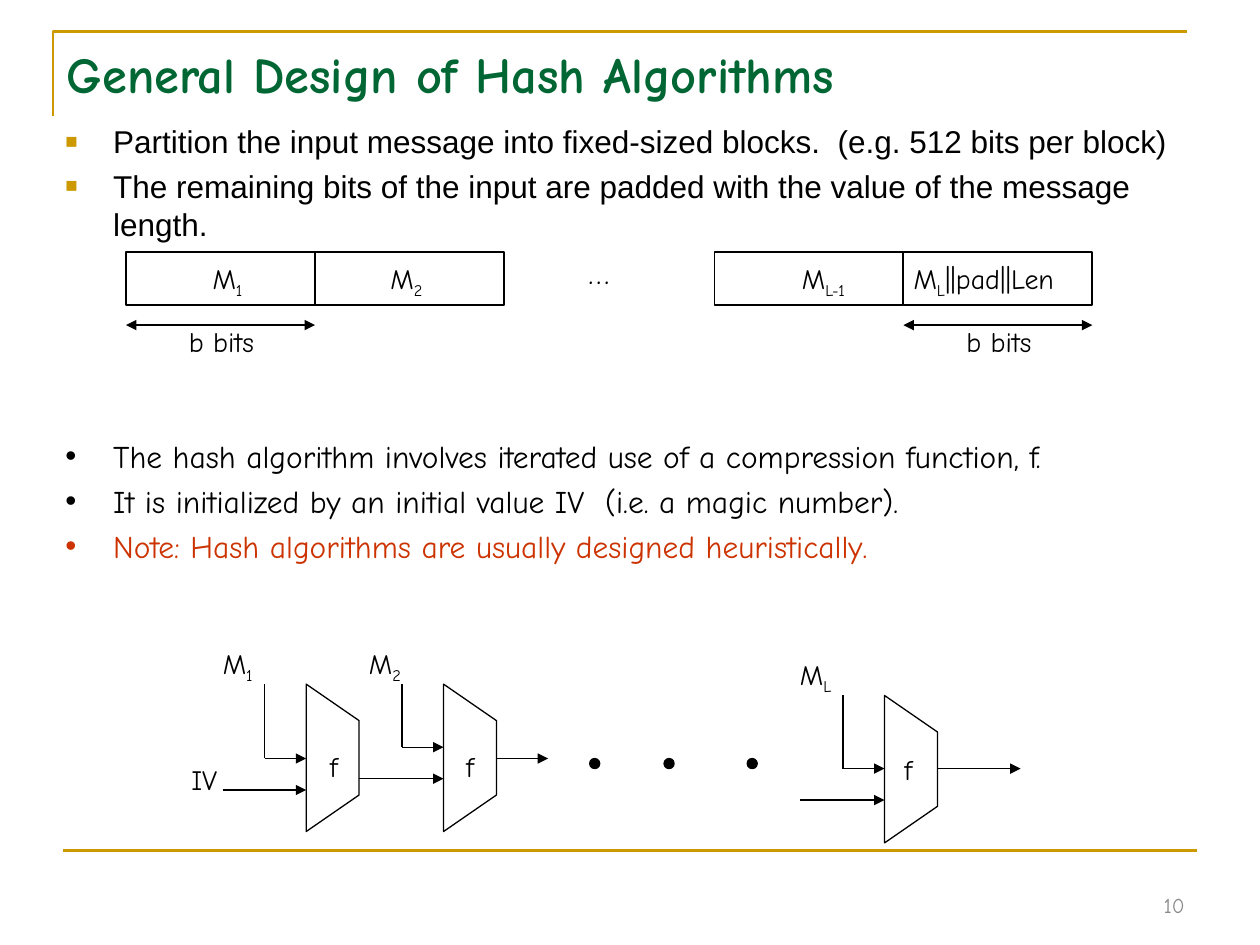
from dataclasses import dataclass

from lxml import etree
from pptx import Presentation
from pptx.dml.color import RGBColor
from pptx.enum.shapes import MSO_CONNECTOR, MSO_SHAPE
from pptx.enum.text import MSO_ANCHOR, MSO_AUTO_SIZE, PP_ALIGN
from pptx.oxml.ns import qn
from pptx.util import Inches, Pt

STRAIGHT = MSO_CONNECTOR.STRAIGHT
RECTANGLE, OVAL = MSO_SHAPE.RECTANGLE, MSO_SHAPE.OVAL
LEFT, CENTER, RIGHT = PP_ALIGN.LEFT, PP_ALIGN.CENTER, PP_ALIGN.RIGHT
TOP, MIDDLE, BOTTOM = MSO_ANCHOR.TOP, MSO_ANCHOR.MIDDLE, MSO_ANCHOR.BOTTOM
FIT_SHAPE = MSO_AUTO_SIZE.SHAPE_TO_FIT_TEXT


def color(value):
    """Turn a hex string into a colour."""
    return RGBColor.from_string(value)


def inches(values):
    """Turn plain numbers into lengths."""
    return [Inches(value) for value in values]


def add_child(parent, tag, **attributes):
    """Append a DrawingML element with the given attributes."""
    return etree.SubElement(parent, qn(tag), attributes)


@dataclass
class SlideBuilder:
    """Hold the style and the slide, and add each kind of element."""

    slide: object
    hand_font: str = "Comic Neue"
    plain_font: str = "Arial"
    ink: str = "000000"
    gold: str = "CC9900"
    green: str = "006633"
    red: str = "CC3300"
    gray: str = "898989"

    def format_font(self, paragraph, size, value=None, name=None, bold=False):
        """Set the font of a whole paragraph."""
        font = paragraph.font
        font.name = name or self.hand_font
        font.size = Pt(size)
        font.bold = bold
        font.color.rgb = color(value or self.ink)

    def title(self, text, box):
        """Fill and place the title placeholder."""
        shape = self.slide.shapes.title
        shape.left, shape.top, shape.width, shape.height = inches(box)
        frame = shape.text_frame
        frame.text = text
        frame.vertical_anchor = MIDDLE
        frame.paragraphs[0].alignment = LEFT
        self.format_font(frame.paragraphs[0], 28.8, self.green, bold=True)

    def bullets(self, items, box, character, name, bullet_color=None, percent=100):
        """Add a bulleted list from pairs of text and colour."""
        frame = self.slide.shapes.add_textbox(*inches(box)).text_frame
        frame.word_wrap = True
        for index, (text, value) in enumerate(items):
            paragraph = frame.add_paragraph() if index else frame.paragraphs[0]
            paragraph.text = text
            paragraph.space_before = Pt(4)
            properties = paragraph._p.get_or_add_pPr()
            properties.set("marL", str(Inches(0.38)))
            properties.set("indent", str(Inches(-0.38)))
            fill = add_child(properties, "a:buClr")
            add_child(fill, "a:srgbClr", val=bullet_color or value)
            add_child(properties, "a:buSzPct", val=str(percent * 1000))
            add_child(properties, "a:buFont", typeface=self.plain_font)
            add_child(properties, "a:buChar", char=character)
            self.format_font(paragraph, 18, value, name)

    def label(self, box, text, subscript="", rest="", size=16, value=None,
              align=LEFT, anchor=TOP, padded=False, wrap=False):
        """Add a short text with an optional subscript."""
        frame = self.slide.shapes.add_textbox(*inches(box)).text_frame
        frame.word_wrap = wrap
        frame.vertical_anchor = anchor
        if not wrap:
            frame.auto_size = FIT_SHAPE
        if not padded:
            frame.margin_left = frame.margin_right = 0
            frame.margin_top = frame.margin_bottom = 0
        paragraph = frame.paragraphs[0]
        paragraph.alignment = align
        self.format_font(paragraph, size, value)
        for part, baseline in ((text, 0), (subscript, -25000), (rest, 0)):
            if part:
                run = paragraph.add_run()
                run.text = part
                if baseline:
                    run._r.get_or_add_rPr().set("baseline", str(baseline))

    def shape(self, kind, box, width, fill=None):
        """Add an outlined preset shape."""
        self.outline(self.slide.shapes.add_shape(kind, *inches(box)), width, fill=fill)

    def polygon(self, points, width, value=None, close=True):
        """Add an unfilled outline through the points."""
        start, *others = [inches(point) for point in points]
        builder = self.slide.shapes.build_freeform(*start)
        builder.add_line_segments(others, close=close)
        self.outline(builder.convert_to_shape(), width, value)

    def outline(self, shape, width, value=None, fill=None):
        """Set the line and fill of a shape."""
        shape.shadow.inherit = False
        shape.line.width = Pt(width)
        shape.line.color.rgb = color(value or self.ink)
        if fill:
            shape.fill.solid()
            shape.fill.fore_color.rgb = color(fill)
        else:
            shape.fill.background()

    def line(self, start, end, width=0.75, value=None, heads=()):
        """Add a straight line with arrowheads at the named ends."""
        connector = self.slide.shapes.add_connector(STRAIGHT, *inches(start + end))
        connector.line.width = Pt(width)
        connector.line.color.rgb = color(value or self.ink)
        properties = connector._element.spPr
        for head in heads:
            add_child(properties.find(qn("a:ln")), head, type="triangle")
        add_child(properties, "a:effectLst")

    def arrow(self, start, end):
        """Add a thin arrow pointing at its end."""
        self.line(start, end, heads=("a:tailEnd",))

    def message_block(self, left):
        """Add one block of the padded message."""
        self.shape(RECTANGLE, (left, 2, 1.5, 0.42), 1)

    def bit_width(self, left):
        """Add the width mark below a message block."""
        self.line((left, 2.58), (left + 1.5, 2.58), 1.25,
                  heads=("a:headEnd", "a:tailEnd"))
        self.label((left + 0.5, 2.58, 0.6, 0.27), "b bits")

    def stage(self, left, top, message_y, chain_y, chain_x, output, label_box, number, f_at):
        """Add a compression function with its inputs and output."""
        right = left + 0.42
        self.polygon([(left, top), (right, top + 0.29), (right, top + 0.88),
                      (left, top + 1.17)], 0.75)
        bend = left - 0.33
        self.line((bend, top), (bend, message_y))
        self.arrow((bend, message_y), (left, message_y))
        self.arrow((chain_x, chain_y), (left, chain_y))
        if output:
            self.arrow((right, output[1]), output)
        self.label((*f_at, 0.31, 0.37), "f", padded=True)
        self.label((*label_box, 0.37), "M", number, padded=True)


def main():
    """Build the slide and save it."""
    presentation = Presentation()
    presentation.slide_width, presentation.slide_height = inches((10, 7.5))
    slide = presentation.slides.add_slide(presentation.slide_layouts[5])
    builder = SlideBuilder(slide)
    ink = builder.ink

    builder.polygon([(0.42, 0.92), (0.42, 0.25), (9.42, 0.25)], 1.5, builder.gold, False)
    builder.line((0.5, 6.75), (9.5, 6.75), 1.5, builder.gold)
    builder.title("General Design of Hash Algorithms", (0.43, 0.29, 8.5, 0.58))
    builder.bullets([
        ("Partition the input message into fixed-sized blocks.  (e.g. 512 bits per block)", ink),
        ("The remaining bits of the input are padded with the value of the message length.", ink),
    ], (0.42, 0.92, 9.17, 1.83), "■", builder.plain_font, builder.gold, 65)

    for left in (1, 2.5, 5.67, 7.17):
        builder.message_block(left)
    for left, width, number in ((1.67, 0.27, "1"), (3.08, 0.29, "2"), (6.33, 0.41, "L-1")):
        builder.label((left, 2.08, width, 0.27), "M", number, align=CENTER)
    builder.label((7.25, 2.08, 1.38, 0.27), "M", "L", "||pad||Len")
    builder.label((4.67, 2.01, 0.17, 0.3), "…", size=18)
    for left in (1, 7.17):
        builder.bit_width(left)

    builder.bullets([
        ("The hash algorithm involves iterated use of a compression function, f.", ink),
        ("It is initialized by an initial value IV  (i.e. a magic number).", ink),
        ("Note: Hash algorithms are usually designed heuristically.", builder.red),
    ], (0.42, 3.42, 9.17, 1.25), "•", builder.hand_font)

    builder.stage(2.43, 5.43, 6.02, 6.27, 1.77, None, (1.67, 5.08, 0.47), "1", (2.52, 5.9))
    builder.stage(3.52, 5.43, 5.93, 6.18, 2.85, (4.35, 6.02), (2.83, 5.08, 0.49), "2", (3.6, 5.9))
    builder.stage(7.02, 5.52, 6.1, 6.35, 6.35, (8.1, 6.1), (6.25, 5.17, 0.48), "L", (7.08, 5.92))
    builder.label((1.42, 6, 0.47, 0.37), "IV", padded=True)
    for left in (4.68, 5.27, 5.93):
        builder.shape(OVAL, (left, 6.02, 0.08, 0.08), 0.75, ink)
    builder.label((7.17, 6.83, 2.33, 0.5), "10", size=12, value=builder.gray,
                  align=RIGHT, anchor=BOTTOM, padded=True, wrap=True)
    presentation.save("out.pptx")


if __name__ == "__main__":
    main()
